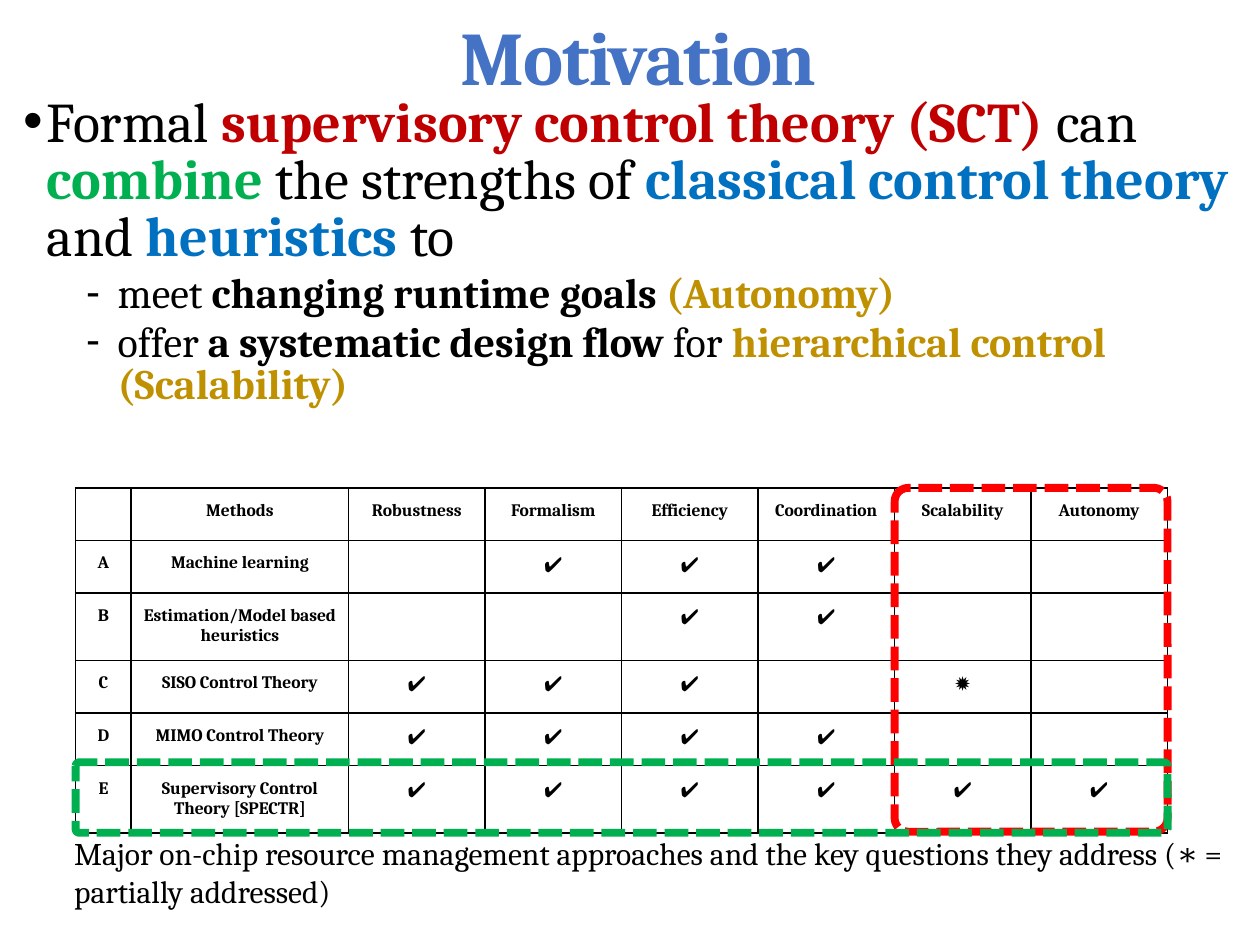
from pptx import Presentation
from pptx.dml.color import RGBColor
from pptx.enum.dml import MSO_LINE
from pptx.enum.shapes import MSO_SHAPE
from pptx.enum.text import MSO_ANCHOR, MSO_AUTO_SIZE, PP_ALIGN
from pptx.oxml.ns import qn
from pptx.util import Pt
from lxml.etree import SubElement

BLACK = RGBColor(0x00, 0x00, 0x00)
TITLE_BLUE = RGBColor(0x44, 0x72, 0xC4)
DARK_RED = RGBColor(0xC0, 0x00, 0x00)
GREEN = RGBColor(0x00, 0xB0, 0x50)
BLUE = RGBColor(0x00, 0x70, 0xC0)
GOLD = RGBColor(0xBF, 0x90, 0x00)
RED = RGBColor(0xFF, 0x00, 0x00)


def add_run(p, text, size, color=BLACK, bold=False):
    r = p.add_run()
    r.text = text
    r.font.color.rgb = color
    for name, value in {"name": "Cambria", "size": Pt(size), "bold": bold}.items():
        setattr(r.font, name, value)
    return r


def place(sp, left, top, width, height):
    sp.left, sp.top, sp.width, sp.height = map(Pt, (left, top, width, height))


prs = Presentation()
prs.slide_width, prs.slide_height = Pt(720), Pt(540)
s = prs.slides.add_slide(prs.slide_layouts[1])

# Title
title = s.shapes.title
place(title, 6, 6, 708, 58)
tf = title.text_frame
tf.auto_size = MSO_AUTO_SIZE.NONE
tf.vertical_anchor = MSO_ANCHOR.MIDDLE
p = tf.paragraphs[0]
p.alignment, p.line_spacing = PP_ALIGN.CENTER, 0.9
r = add_run(p, "Motivation", 43.2, TITLE_BLUE, True)
r.font._element.set("spc", "-70")
p._p.get_or_add_pPr().set("marL", str(Pt(10)))

# Bulleted list: level, runs of (text, colour, bold)
points = [
    (0, [("Formal ", BLACK, False), ("supervisory control theory (SCT) ", DARK_RED, True),
         ("can ", BLACK, False), ("combine", GREEN, True),
         (" the strengths of ", BLACK, False), ("classical control theory ", BLUE, True),
         ("and ", BLACK, False), ("heuristics ", BLUE, True), ("to", BLACK, False)]),
    (1, [("meet", BLACK, False), (" changing runtime goals ", BLACK, True),
         ("(Autonomy)", GOLD, True)]),
    (1, [("offer ", BLACK, False), ("a systematic design flow ", BLACK, True),
         ("for ", BLACK, False), ("hierarchical control (Scalability)", GOLD, True)]),
]
# Per level: size, space before, left margin, hanging indent, bullet
levels = [(32, 7.3, 13.5, 13.5, "•"), (24, 3.4, 54, 18, "-")]

body = s.placeholders[1]
place(body, 6, 51.6, 708, 419)
tf = body.text_frame
tf.auto_size = MSO_AUTO_SIZE.NONE
for i, (level, runs) in enumerate(points):
    size, before, margin, hang, bullet = levels[level]
    p = tf.add_paragraph() if i else tf.paragraphs[0]
    p.level, p.line_spacing, p.space_before = level, 0.85, Pt(before)
    p.alignment = PP_ALIGN.LEFT
    pPr = p._p.get_or_add_pPr()
    pPr.set("marL", str(Pt(margin)))
    pPr.set("indent", str(-Pt(hang)))
    SubElement(pPr, qn("a:buChar"), char=bullet)
    for text, color, bold in runs:
        add_run(p, text, size, color, bold)

# Caption
caption = s.shapes.add_textbox(Pt(35.3), Pt(469.5), Pt(671), Pt(56))
tf = caption.text_frame
tf.word_wrap = True
tf.margin_left = tf.margin_top = tf.margin_right = tf.margin_bottom = Pt(7.2)
p = tf.paragraphs[0]
p.space_before = Pt(7.3)
add_run(p, "Major on-chip resource management approaches and the key questions "
           "they address (∗ = partially addressed)", 18)

# Comparison table
rows = [
    ("", "Methods", "Robustness", "Formalism", "Efficiency", "Coordination",
     "Scalability", "Autonomy"),
    ("A", "Machine learning", "", "✔", "✔", "✔", "", ""),
    ("B", "Estimation/Model based heuristics", "", "", "✔", "✔", "", ""),
    ("C", "SISO Control Theory", "✔", "✔", "✔", "", "✹", ""),
    ("D", "MIMO Control Theory", "✔", "✔", "✔", "✔", "", ""),
    ("E", "Supervisory Control Theory [SPECTR]", "✔", "✔", "✔", "✔", "✔", "✔"),
]
widths = [31.8, 124.2] + [78] * 6
left, top, row_height, height = 43.2, 278.8, 30.1, 196.5
width = sum(widths)

table = s.shapes.add_table(len(rows), len(widths), Pt(left), Pt(top),
                           Pt(width), Pt(row_height * len(rows))).table
table.first_row = table.horz_banding = False
for col, w in zip(table.columns, widths):
    col.width = Pt(w)
for i, values in enumerate(rows):
    table.rows[i].height = Pt(row_height)
    for j, value in enumerate(values):
        cell = table.cell(i, j)
        cell.margin_left = cell.margin_right = Pt(7.2)
        cell.margin_top = cell.margin_bottom = Pt(7.2)
        p = cell.text_frame.paragraphs[0]
        p.alignment = PP_ALIGN.CENTER
        is_label = i == 0 or j < 2
        if value:
            add_run(p, value, 10 if is_label else 12, bold=is_label)
        else:
            SubElement(p._p, qn("a:endParaRPr"), sz="1000")
        tcPr = cell._tc.get_or_add_tcPr()
        for side in ("a:lnL", "a:lnR", "a:lnT", "a:lnB"):
            ln = SubElement(tcPr, qn(side), w=str(Pt(1)))
            SubElement(SubElement(ln, qn("a:solidFill")), qn("a:srgbClr"), val=str(BLACK))
        cell.fill.background()

# Dashed frames around the last two columns and the last row
frame_width, frame_height = sum(widths[-2:]), 40.3
frames = [
    (left + width - frame_width, top, frame_width, height, RED),
    (left, top + height - frame_height + 0.6, width, frame_height, GREEN),
]
for x, y, w, h, color in frames:
    sp = s.shapes.add_shape(MSO_SHAPE.ROUNDED_RECTANGLE, Pt(x), Pt(y), Pt(w), Pt(h))
    sp.adjustments[0] = 0.05
    sp.shadow.inherit = False
    sp.fill.background()
    sp.line.color.rgb = color
    sp.line.width = Pt(4.5)
    sp.line.dash_style = MSO_LINE.SQUARE_DOT

prs.save("out.pptx")
